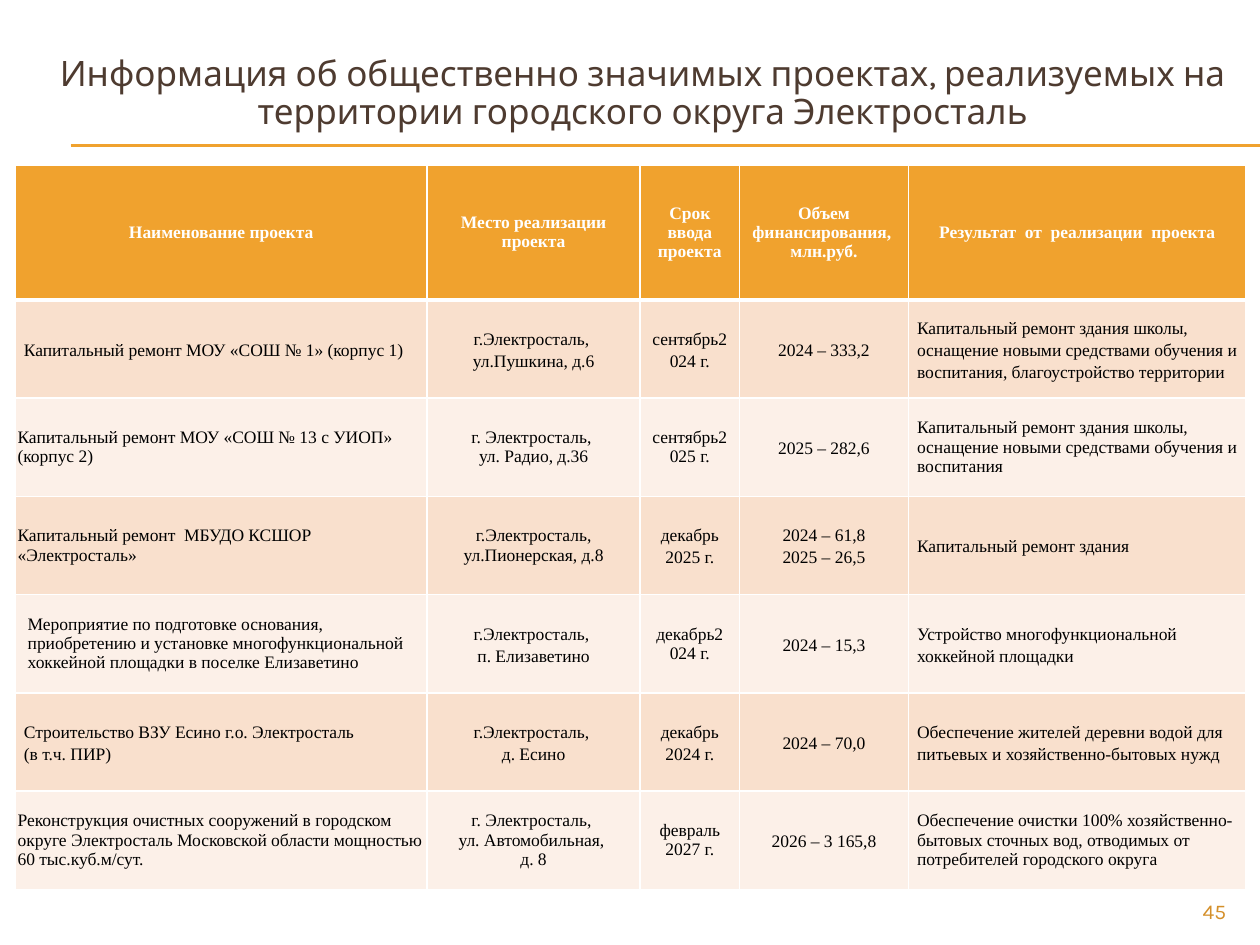
from lxml.etree import SubElement
from pptx import Presentation
from pptx.dml.color import RGBColor
from pptx.enum.shapes import MSO_CONNECTOR
from pptx.enum.text import MSO_ANCHOR, MSO_AUTO_SIZE, PP_ALIGN
from pptx.oxml.ns import qn
from pptx.util import Inches, Pt

COLORS = {
    "accent": "F0A22E",
    "title": "4E3B30",
    "number": "D48F29",
    "band_dark": "F9E0CD",
    "band_light": "FCF0E8",
    "white": "FFFFFF",
    "black": "000000",
}
TITLE_FONT = "Karla"
TABLE_FONT = "Times New Roman"
COLUMN_WIDTHS = [3.27, 1.69, 0.79, 1.34, 2.68]
HEADER_HEIGHT = 1.07
TITLE = ("Информация об общественно значимых проектах, реализуемых на "
         "территории городского округа Электросталь")
HEADER = ["Наименование проекта", "Место реализации проекта", "Срок ввода проекта",
          "Объем финансирования, \nмлн.руб.", "Результат  от  реализации  проекта"]
PROJECTS = [
    {"insets": [0.07, 0.07, 0.07, 0.07, 0.07], "spacing": [1.15, 1.15, 1.15, 1.15, 1.15],
     "texts": ["Капитальный ремонт МОУ «СОШ № 1» (корпус 1)",
               "г.Электросталь, \nул.Пушкина, д.6", "сентябрь2024 г.", "2024 – 333,2",
               "Капитальный ремонт здания школы, оснащение новыми средствами обучения "
               "и воспитания, благоустройство территории"]},
    {"insets": [0.02, 0.07, 0.07, 0.07, 0.07], "spacing": [1, 1, 1, 1.15, 1],
     "texts": ["Капитальный ремонт МОУ «СОШ № 13 с УИОП»  (корпус 2)",
               "г. Электросталь, \nул. Радио, д.36", "сентябрь2025 г.", "2025 – 282,6",
               "Капитальный ремонт здания школы, оснащение новыми средствами обучения "
               "и воспитания"]},
    {"insets": [0.02, 0.07, 0.07, 0.07, 0.07], "spacing": [1, 1, 1.15, 1.15, 1.15],
     "texts": ["Капитальный ремонт  МБУДО КСШОР  «Электросталь»",
               "г.Электросталь, ул.Пионерская, д.8", "декабрь 2025 г.",
               "2024 – 61,8\n2025 – 26,5", "Капитальный ремонт здания"]},
    {"insets": [0.1, 0.1, 0.1, 0.1, 0.07], "spacing": [1, 1.15, 1, 1.15, 1.15],
     "texts": ["Мероприятие по подготовке основания, приобретению и установке "
               "многофункциональной хоккейной площадки в поселке Елизаветино",
               "г.Электросталь, \nп. Елизаветино", "декабрь2024 г.", "2024 – 15,3",
               "Устройство многофункциональной хоккейной площадки"]},
    {"insets": [0.07, 0.07, 0.07, 0.07, 0.07], "spacing": [1.15, 1.15, 1.15, 1.15, 1.15],
     "texts": ["Строительство ВЗУ Есино г.о. Электросталь\n(в т.ч. ПИР)",
               "г.Электросталь, \nд. Есино", "декабрь\n2024 г.", "2024 – 70,0",
               "Обеспечение жителей деревни водой для питьевых и хозяйственно-бытовых нужд"]},
    {"insets": [0.02, 0.07, 0.07, 0.07, 0.07], "spacing": [1, 1, 1, 1.15, 1],
     "texts": ["Реконструкция очистных сооружений в городском округе Электросталь "
               "Московской области мощностью 60 тыс.куб.м/сут.",
               "г. Электросталь, \nул. Автомобильная, \nд. 8", "февраль 2027 г.",
               "2026 – 3 165,8",
               "Обеспечение очистки 100% хозяйственно-бытовых сточных вод, отводимых "
               "от потребителей городского округа"]},
]


def rgb(name):
    """Return the palette colour with the given name."""
    return RGBColor.from_string(COLORS[name])


def write_text(frame, text, font, size, color, align, spacing=1.0, bold=False):
    """Fill a text frame with one paragraph per line of text."""
    for index, line in enumerate(text.split("\n")):
        para = frame.add_paragraph() if index else frame.paragraphs[0]
        para.alignment = align
        para.line_spacing = float(spacing)
        para.space_before = Pt(0)
        span = para.add_run()
        span.text = line
        span.font.name = font
        span.font.size = Pt(size)
        span.font.bold = bold
        span.font.color.rgb = rgb(color)


def add_title(page, left, top, width, height):
    """Place the slide title in its placeholder."""
    box = page.shapes.title
    box.left, box.top = Inches(left), Inches(top)
    box.width, box.height = Inches(width), Inches(height)
    frame = box.text_frame
    frame.word_wrap = True
    frame.auto_size = MSO_AUTO_SIZE.NONE
    frame.vertical_anchor = MSO_ANCHOR.MIDDLE
    write_text(frame, TITLE, TITLE_FONT, 20, "title", PP_ALIGN.CENTER, 0.9)


def add_rule(page, left, top, width):
    """Draw the double rule under the title."""
    for y in (top, top + 0.01):
        line = page.shapes.add_connector(MSO_CONNECTOR.STRAIGHT, Inches(left), Inches(y),
                                         Inches(left + width), Inches(y))
        line.line.color.rgb = rgb("accent")
        line.line.width = Pt(0.75)
        SubElement(line._element.spPr, qn("a:effectLst"))


def set_borders(cell, top, bottom):
    """Give a cell white borders, before its fill is set."""
    props = cell._tc.get_or_add_tcPr()
    for side, points in (("L", 1), ("R", 1), ("T", top), ("B", bottom)):
        edge = SubElement(props, qn(f"a:ln{side}"), w=str(Pt(points)))
        fill = SubElement(edge, qn("a:solidFill"))
        SubElement(fill, qn("a:srgbClr"), val=COLORS["white"])


def fill_cell(cell, text, fill, color, align, spacing=1.0, bold=False, top=1, bottom=1):
    """Format one table cell and write its text."""
    set_borders(cell, top, bottom)
    cell.fill.solid()
    cell.fill.fore_color.rgb = rgb(fill)
    cell.vertical_anchor = MSO_ANCHOR.MIDDLE
    write_text(cell.text_frame, text, TABLE_FONT, 10, color, align, spacing, bold)


def add_projects_table(page, left, top, width, height):
    """Place the table of projects with a header and banded rows."""
    table = page.shapes.add_table(len(PROJECTS) + 1, len(HEADER), Inches(left), Inches(top),
                                  Inches(width), Inches(height)).table
    for column, column_width in zip(table.columns, COLUMN_WIDTHS):
        column.width = Inches(column_width)
    for row in table.rows:
        row.height = Inches((height - HEADER_HEIGHT) / len(PROJECTS))
    table.rows[0].height = Inches(HEADER_HEIGHT)
    for index, text in enumerate(HEADER):
        fill_cell(table.cell(0, index), text, "accent", "white", PP_ALIGN.CENTER,
                  bold=True, bottom=3)
    for number, project in enumerate(PROJECTS, 1):
        band = "band_dark" if number % 2 else "band_light"
        parts = zip(project["texts"], project["insets"], project["spacing"])
        for index, (text, inset, spacing) in enumerate(parts):
            cell = table.cell(number, index)
            cell.margin_left = cell.margin_right = Inches(inset)
            cell.margin_top = cell.margin_bottom = Inches(0)
            align = PP_ALIGN.CENTER if 0 < index < len(HEADER) - 1 else PP_ALIGN.LEFT
            fill_cell(cell, text, band, "black", align, spacing, top=3 if number == 1 else 1)


def add_page_number(page, left, top, width, height):
    """Place the page number."""
    box = page.shapes.add_textbox(Inches(left), Inches(top), Inches(width), Inches(height))
    box.text_frame.word_wrap = True
    write_text(box.text_frame, "45", TITLE_FONT, 12, "number", PP_ALIGN.RIGHT)


def main():
    """Build the slide and save the deck."""
    deck = Presentation()
    deck.slide_width, deck.slide_height = Inches(10), Inches(7.5)
    page = deck.slides.add_slide(deck.slide_layouts[5])
    add_rule(page, 0.56, 1.15, 9.44)
    add_title(page, 0.35, 0.29, 9.5, 0.92)
    add_projects_table(page, 0.12, 1.31, 9.76, 5.75)
    add_page_number(page, 9, 7.08, 0.83, 0.27)
    deck.save("out.pptx")


if __name__ == "__main__":
    main()
